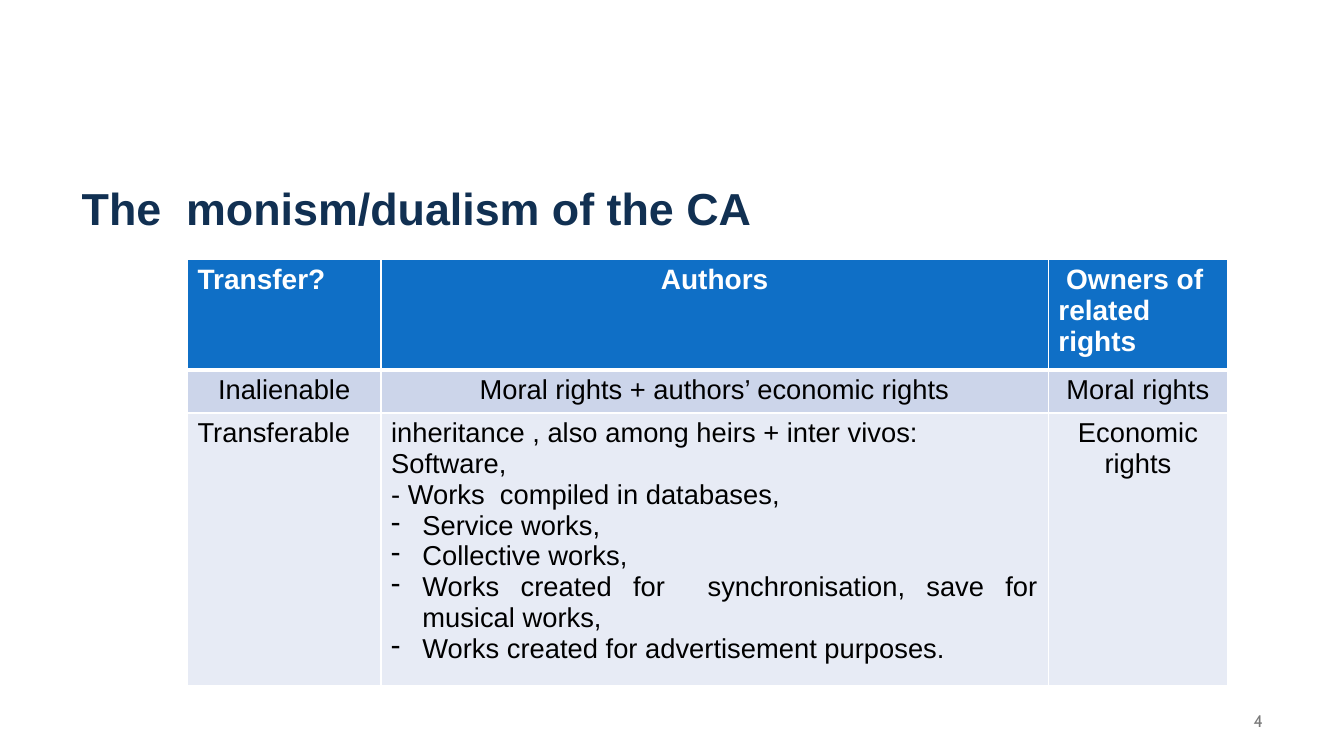
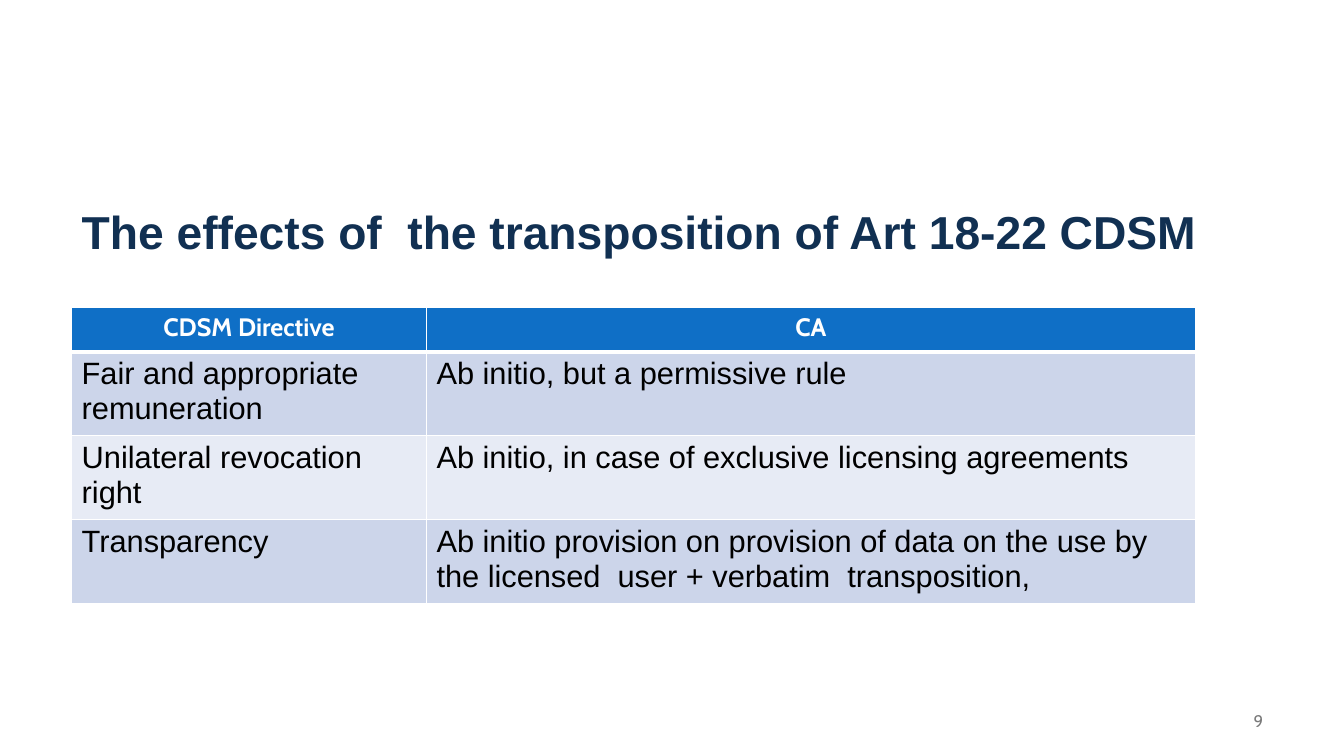
import dataclasses

import pptx
import pptx.dml.color
import pptx.enum.text
import pptx.oxml
import pptx.oxml.ns
import pptx.util

ALIGN = pptx.enum.text.PP_ALIGN
MIDDLE = pptx.enum.text.MSO_ANCHOR.MIDDLE
COLORS = {
    "title": "113052",
    "header": "0F6FC6",
    "odd_row": "CCD5EA",
    "even_row": "E7EBF5",
    "rule": "FFFFFF",
    "header_text": "FFFFFF",
    "body_text": "000000",
    "number": "797979",
}
SLIDE_WIDTH, SLIDE_HEIGHT = pptx.util.Inches(13.33), pptx.util.Inches(7.5)
MARGIN = 5.33
TITLE_TOP, TITLE_WIDTH = 21.33, 89.4
BULLET_INDENT = pptx.util.Inches(0.31)
THIN, THICK = 1, 3


@dataclasses.dataclass
class Cell:
    lines: tuple
    align: ALIGN = ALIGN.LEFT
    bullets: tuple = ()


@dataclasses.dataclass
class TextStyle:
    size: float
    color: str
    font: str = "Arial"
    bold: bool = False


def across(percent):
    return round(SLIDE_WIDTH * percent / 100)


def down(percent):
    return round(SLIDE_HEIGHT * percent / 100)


def rgb(name):
    return pptx.dml.color.RGBColor.from_string(COLORS[name])


def style_paragraph(para, style, align):
    para.alignment = align
    para.font.size = pptx.util.Pt(style.size)
    para.font.name = style.font
    para.font.bold = style.bold
    para.font.color.rgb = rgb(style.color)


def add_dash_bullet(para):
    properties = para._p.get_or_add_pPr()
    properties.set("marL", str(BULLET_INDENT))
    properties.set("indent", str(-BULLET_INDENT))
    bullet = pptx.oxml.parse_xml(
        f'<a:buChar {pptx.oxml.ns.nsdecls("a")} char="-"/>')
    properties.append(bullet)


def set_borders(cell, top, bottom):
    properties = cell._tc.get_or_add_tcPr()
    widths = {"lnL": THIN, "lnR": THIN, "lnT": top, "lnB": bottom}
    for position, (side, width) in enumerate(widths.items()):
        line = pptx.oxml.parse_xml(
            f'<a:{side} {pptx.oxml.ns.nsdecls("a")} w="{pptx.util.Pt(width)}">'
            f'<a:solidFill><a:srgbClr val="{COLORS["rule"]}"/></a:solidFill>'
            f'</a:{side}>')
        properties.insert(position, line)


def fill_cell(cell, content, style):
    frame = cell.text_frame
    for index, line in enumerate(content.lines + content.bullets):
        para = frame.add_paragraph() if index else frame.paragraphs[0]
        para.text = line
        if index >= len(content.lines):
            add_dash_bullet(para)
        style_paragraph(para, style, content.align)


def add_title(page, text, size, height):
    title = page.shapes.title
    title.left, title.top = across(MARGIN), down(TITLE_TOP)
    title.width, title.height = across(TITLE_WIDTH), down(height)
    frame = title.text_frame
    frame.text = text
    frame.word_wrap = True
    frame.auto_size = pptx.enum.text.MSO_AUTO_SIZE.NONE
    frame.vertical_anchor = MIDDLE
    para = frame.paragraphs[0]
    para.line_spacing = 0.9
    style_paragraph(para, TextStyle(size, "title", bold=True), ALIGN.LEFT)


def add_number(page, number):
    box = page.shapes.add_textbox(
        across(72.22), down(92.67), across(22.5), down(5.33))
    frame = box.text_frame
    frame.word_wrap = True
    frame.vertical_anchor = MIDDLE
    para = frame.paragraphs[0]
    para.text = str(number)
    style_paragraph(para, TextStyle(12, "number", "Cabin"), ALIGN.RIGHT)


def add_grid(page, left, top, columns, heights, rows, header, body):
    table = page.shapes.add_table(
        len(heights), len(columns), across(left), down(top),
        across(sum(columns)), down(sum(heights))).table
    table.first_row = table.horz_banding = False
    for column, width in zip(table.columns, columns):
        column.width = across(width)
    for index, (row, height) in enumerate(zip(table.rows, heights)):
        row.height = down(height)
        fill = ("odd_row" if index % 2 else "even_row") if index else "header"
        for cell, content in zip(row.cells, rows[index]):
            cell.fill.solid()
            cell.fill.fore_color.rgb = rgb(fill)
            set_borders(cell, THICK if index == 1 else THIN,
                        THIN if index else THICK)
            fill_cell(cell, content, body if index else header)


def add_page(deck, title, title_size, title_height, number):
    page = deck.slides.add_slide(deck.slide_layouts.get_by_name("Title Only"))
    add_title(page, title, title_size, title_height)
    add_number(page, number)
    return page


def add_monism_page(deck):
    page = add_page(deck, "The  monism/dualism of the CA", 32, 13.07, 4)
    rows = [
        [Cell(("Transfer?",)),
         Cell(("Authors",), ALIGN.CENTER),
         Cell((" Owners of related rights",))],
        [Cell((text,), ALIGN.CENTER) for text in (
            "Inalienable",
            "Moral rights + authors’ economic rights",
            "Moral rights")],
        [Cell(("Transferable",), ALIGN.JUSTIFY),
         Cell(("inheritance , also among heirs + inter vivos:",
               "Software,",
               "- Works  compiled in databases,"),
              ALIGN.JUSTIFY,
              ("Service works,",
               "Collective works,",
               "Works created for  synchronisation, save for musical works,",
               "Works created for advertisement purposes.")),
         Cell(("Economic rights",), ALIGN.CENTER)],
    ]
    add_grid(page, 13.95, 34.27, (14.4, 49.65, 13.35), (9.47, 5.2, 33.47),
             rows, TextStyle(20, "header_text", bold=True),
             TextStyle(19.5, "body_text"))


def add_transposition_page(deck):
    page = add_page(deck, "The effects of  the transposition of Art 18-22 CDSM",
                    33, 19.33, 9)
    effects = [
        ("Fair and appropriate remuneration",
         "Ab initio, but a permissive rule"),
        ("Unilateral revocation  right",
         "Ab initio, in case of exclusive licensing agreements"),
        ("Transparency",
         "Ab initio provision on provision of data on the use by the licensed"
         "  user + verbatim  transposition,"),
    ]
    rows = [[Cell((text,), ALIGN.CENTER) for text in ("CDSM Directive", "CA")]]
    rows += [[Cell((text,)) for text in effect] for effect in effects]
    add_grid(page, MARGIN, 40.67, (26.4, 57.22), (5.87, 10.13, 5.87, 10.13),
             rows, TextStyle(18, "header_text", "Cabin", True),
             TextStyle(22, "body_text"))


def main():
    deck = pptx.Presentation()
    deck.slide_width, deck.slide_height = SLIDE_WIDTH, SLIDE_HEIGHT
    add_monism_page(deck)
    add_transposition_page(deck)
    deck.save("out.pptx")


if __name__ == "__main__":
    main()
